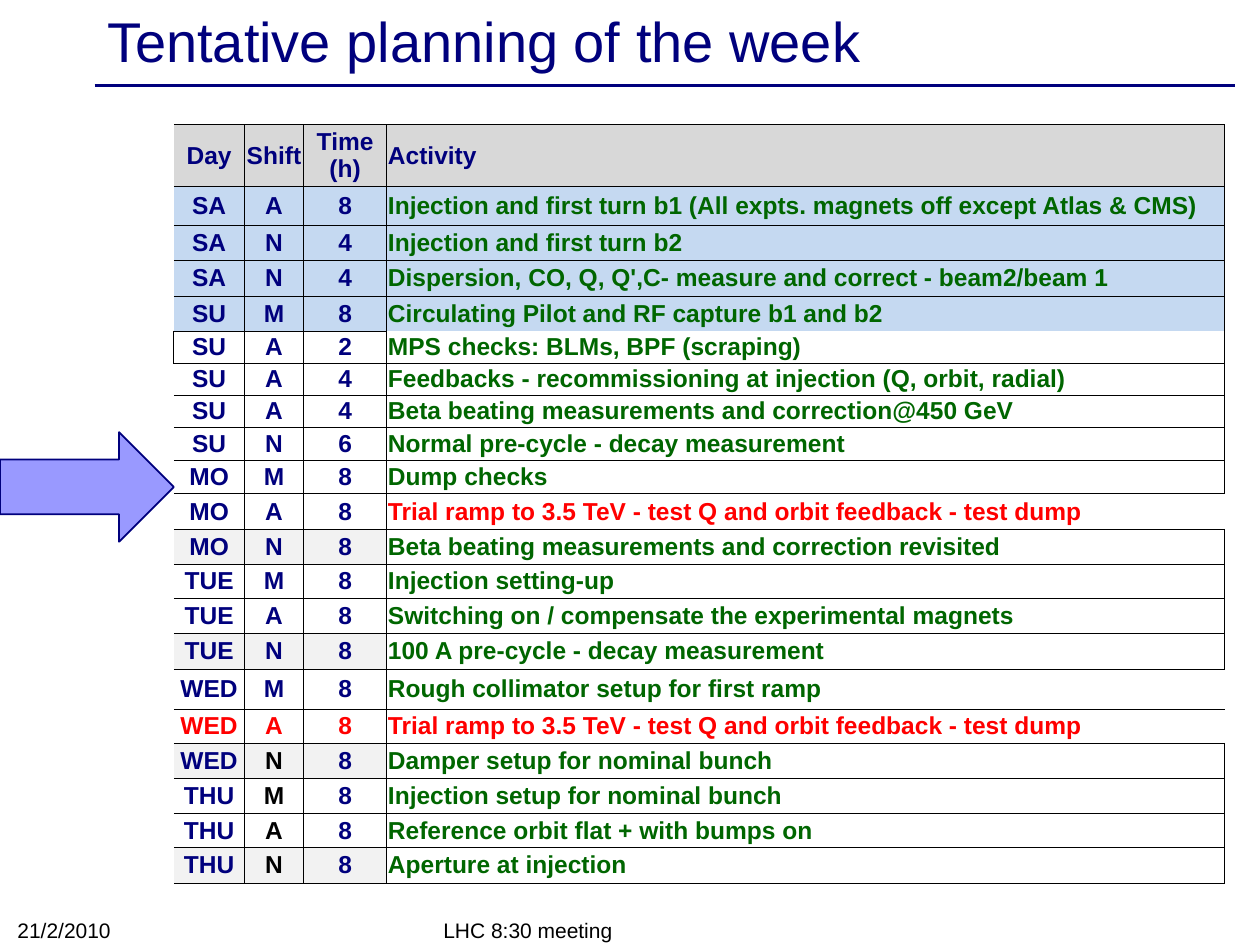
from lxml import etree
from pptx import Presentation
from pptx.dml.color import RGBColor
from pptx.enum.shapes import MSO_CONNECTOR, MSO_SHAPE
from pptx.enum.text import MSO_ANCHOR, PP_ALIGN
from pptx.oxml.ns import qn
from pptx.util import Inches, Pt

LINE, ARROW = MSO_CONNECTOR.STRAIGHT, MSO_SHAPE.RIGHT_ARROW
MIDDLE, BOTTOM = MSO_ANCHOR.MIDDLE, MSO_ANCHOR.BOTTOM
LEFT, CENTER = PP_ALIGN.LEFT, PP_ALIGN.CENTER

NAVY = RGBColor(0x00, 0x00, 0x7D)
GREEN = RGBColor(0x00, 0x66, 0x00)
RED = RGBColor(0xFF, 0x00, 0x00)
BLACK = RGBColor(0x00, 0x00, 0x00)
WHITE = RGBColor(0xFF, 0xFF, 0xFF)
GREY = RGBColor(0xD8, 0xD8, 0xD8)
PALE = RGBColor(0xF2, 0xF2, 0xF2)
BLUE = RGBColor(0xC5, 0xD9, 0xF1)
LILAC = RGBColor(0x99, 0x99, 0xFF)

# Row height, day, shift, hours, activity
PLAN = [
    (0.49, "Day", "Shift", "Time (h)", "Activity"),
    (0.31, "SA", "A", "8", "Injection and first turn b1 (All expts. magnets off except Atlas & CMS)"),
    (0.28, "SA", "N", "4", "Injection and first turn b2"),
    (0.28, "SA", "N", "4", "Dispersion, CO, Q, Q',C- measure and correct - beam2/beam 1"),
    (0.28, "SU", "M", "8", "Circulating Pilot and RF capture b1 and b2"),
    (0.25, "SU", "A", "2", "MPS checks: BLMs, BPF (scraping)"),
    (0.25, "SU", "A", "4", "Feedbacks - recommissioning at injection (Q, orbit, radial)"),
    (0.25, "SU", "A", "4", "Beta beating measurements and correction@450 GeV"),
    (0.26, "SU", "N", "6", "Normal pre-cycle - decay measurement"),
    (0.27, "MO", "M", "8", "Dump checks"),
    (0.28, "MO", "A", "8", "Trial ramp to 3.5 TeV - test Q and orbit feedback - test dump"),
    (0.28, "MO", "N", "8", "Beta beating measurements and correction revisited"),
    (0.27, "TUE", "M", "8", "Injection setting-up"),
    (0.28, "TUE", "A", "8", "Switching on / compensate the experimental magnets"),
    (0.28, "TUE", "N", "8", "100 A pre-cycle - decay measurement"),
    (0.32, "WED", "M", "8", "Rough collimator setup for first ramp"),
    (0.27, "WED", "A", "8", "Trial ramp to 3.5 TeV - test Q and orbit feedback - test dump"),
    (0.28, "WED", "N", "8", "Damper setup for nominal bunch"),
    (0.28, "THU", "M", "8", "Injection setup for nominal bunch"),
    (0.27, "THU", "A", "8", "Reference orbit flat + with bumps on"),
    (0.28, "THU", "N", "8", "Aperture at injection"),
]
COLS = [0.56, 0.47, 0.66, 6.65]
LAST_BLUE, OPEN_LEFT, FIRST_PALE = 4, 5, 11
OPEN_RIGHT, RED_ROW, BLACK_FROM = (10, 15, 16), 16, 17


def style(frame, size, color, bold=False):
    for run in frame.paragraphs[0].runs:
        run.font.name, run.font.size = "Arial", Pt(size)
        run.font.bold, run.font.color.rgb = bold, color


def border(cell, hidden):
    """Draw the four sides of a cell in thin black, except the hidden ones."""
    props = cell._tc.get_or_add_tcPr()
    for side in "LRTB":
        edge = etree.SubElement(props, qn("a:ln" + side), w=str(Pt(0.5)))
        if side in hidden:
            etree.SubElement(edge, qn("a:noFill"))
        else:
            ink = etree.SubElement(edge, qn("a:solidFill"))
            etree.SubElement(ink, qn("a:srgbClr"), val=str(BLACK))


prs = Presentation()
prs.slide_width, prs.slide_height = Inches(10), Inches(7.5)
slide = prs.slides.add_slide(prs.slide_layouts[5])
shapes = slide.shapes

rule = shapes.add_connector(LINE, Inches(0.75), Inches(0.68), Inches(9.8), Inches(0.68))
rule.line.color.rgb, rule.line.width = NAVY, Pt(2)
etree.SubElement(rule._element.spPr, qn("a:effectLst"))

title = shapes.title
title.left, title.top = Inches(0.75), Inches(0.03)
title.width, title.height = Inches(9), Inches(0.57)
title.text_frame.text = "Tentative planning of the week"
title.text_frame.vertical_anchor = MIDDLE
title.text_frame.paragraphs[0].alignment = LEFT
style(title.text_frame, 32, NAVY)

for text, left, width in [("LHC 8:30 meeting", 3.42, 3.17), ("21/2/2010", 0.04, 2.33)]:
    box = shapes.add_textbox(Inches(left), Inches(7.25), Inches(width), Inches(0.28))
    frame = box.text_frame
    frame.word_wrap, frame.vertical_anchor = True, BOTTOM
    frame.text = text
    style(frame, 12, BLACK)

high = sum(row[0] for row in PLAN)
table = shapes.add_table(len(PLAN), len(COLS), Inches(1.38), Inches(0.99),
                         Inches(sum(COLS)), Inches(high)).table
for col, width in zip(table.columns, COLS):
    col.width = Inches(width)

for r, (height, *texts) in enumerate(PLAN):
    table.rows[r].height = Inches(height)
    for c, text in enumerate(texts):
        cell = table.cell(r, c)
        last = c == len(COLS) - 1
        cell.margin_left = cell.margin_right = Inches(0.01)
        cell.margin_top = cell.margin_bottom = Inches(0.01)
        cell.vertical_anchor = MIDDLE

        hidden = "L" if c == 0 and r != OPEN_LEFT else ""
        if last:
            hidden += "R" if r in OPEN_RIGHT else ""
            hidden += {LAST_BLUE: "B", LAST_BLUE + 1: "T"}.get(r, "")
        border(cell, hidden)

        if r == 0:
            fill = GREY
        elif r <= LAST_BLUE:
            fill = BLUE
        elif last or r <= LAST_BLUE + 2:
            fill = None
        else:
            fill = PALE if r >= FIRST_PALE and texts[1] == "N" else WHITE
        if fill is None:
            cell.fill.background()
        else:
            cell.fill.solid()
            cell.fill.fore_color.rgb = fill

        color = GREEN if last and r else NAVY
        if r == RED_ROW or text.startswith("Trial ramp"):
            color = RED
        elif c == 1 and r >= BLACK_FROM:
            color = BLACK
        cell.text_frame.text = text
        cell.text_frame.paragraphs[0].alignment = LEFT if last else CENTER
        style(cell.text_frame, 14, color, True)

arrow = shapes.add_shape(ARROW, 0, Inches(3.43), Inches(1.38), Inches(0.87))
arrow.shadow.inherit = False
arrow.fill.solid()
arrow.fill.fore_color.rgb = LILAC
arrow.line.color.rgb, arrow.line.width = NAVY, Pt(1)

prs.save("out.pptx")
